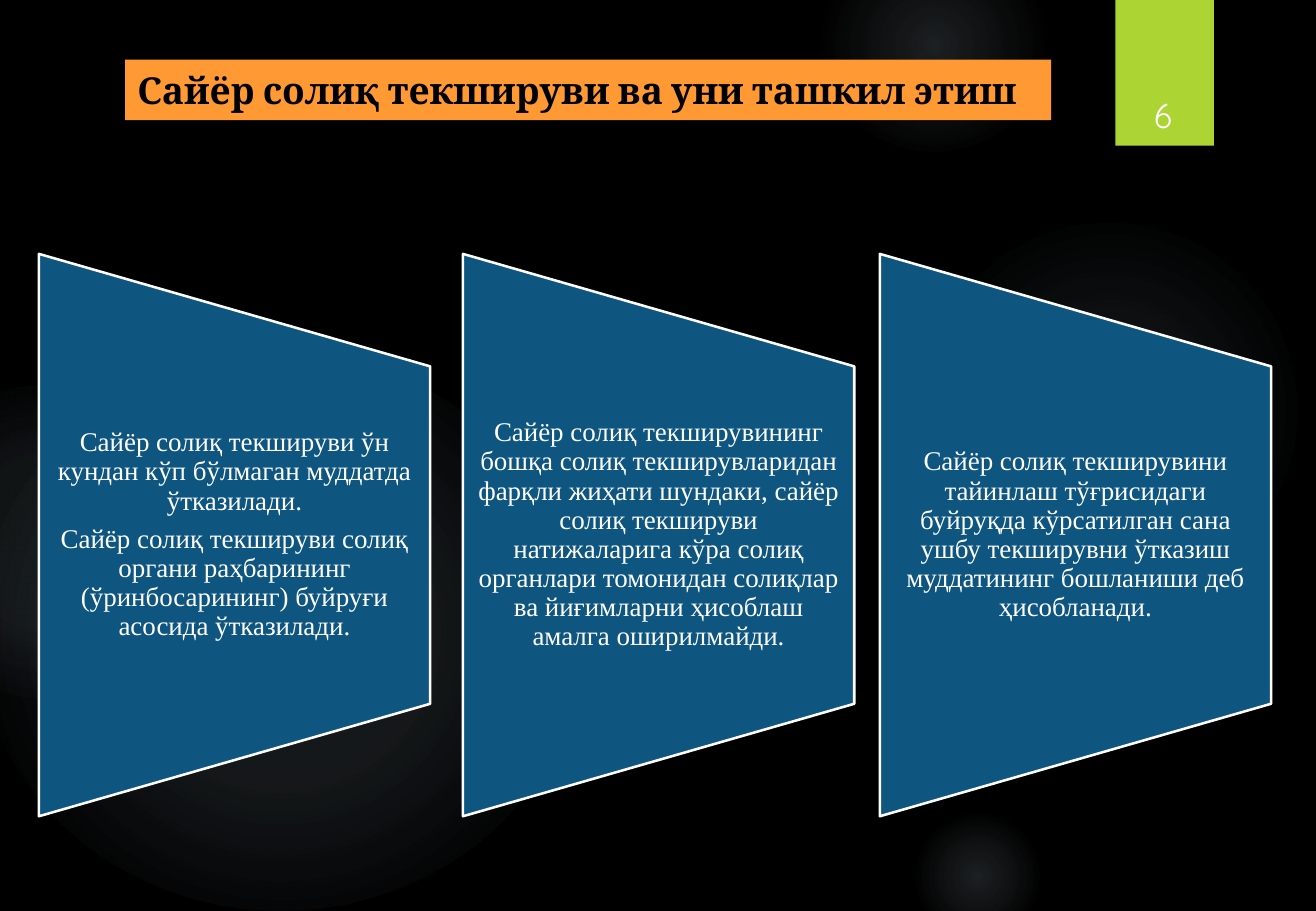
from dataclasses import dataclass

from lxml import etree
from pptx import Presentation
from pptx.dml.color import RGBColor
from pptx.enum.shapes import MSO_SHAPE
from pptx.enum.text import MSO_ANCHOR, MSO_AUTO_SIZE, PP_ALIGN
from pptx.oxml.ns import qn
from pptx.util import Inches, Pt

ELLIPSE = MSO_SHAPE.OVAL
RECTANGLE = MSO_SHAPE.RECTANGLE
TRAPEZOID = MSO_SHAPE.FLOWCHART_MANUAL_OPERATION
CENTER, LEFT = PP_ALIGN.CENTER, PP_ALIGN.LEFT
MIDDLE, BOTTOM = MSO_ANCHOR.MIDDLE, MSO_ANCHOR.BOTTOM
TITLE_ONLY = 5


@dataclass(frozen=True)
class Theme:
    background: str = "000000"
    glow: str = "CAE7F9"
    tab: str = "ACD433"
    panel: str = "0E5580"
    light: str = "FFFFFF"
    banner: str = "FF9933"
    dark: str = "000000"
    title_font: str = "Cambria"
    body_font: str = "Times New Roman"
    number_font: str = "Quicksand"
    title_size: int = 22
    body_size: int = 16
    number_size: int = 20


THEME = Theme()

TITLE = "Сайёр солиқ текшируви ва уни ташкил этиш"
PAGE_NUMBER = "6"

# Left, top, width, height; then (position, opacity) stops in percent
GLOWS = [
    ((7.46, 1.83, 3.34, 3.08), ((0, 7), (36, 6), (69, 0))),
    ((6.74, -0.5, 1.9, 1.75), ((0, 14), (36, 7), (73, 0))),
    ((7.46, 6.67, 1.17, 1.08), ((0, 14), (36, 7), (66, 0))),
    ((-0.18, 2.92, 4.97, 4.58), ((0, 11), (36, 10), (75, 0))),
    ((-0.99, 3.17, 2.8, 2.58), ((0, 8), (36, 8), (72, 0))),
]

PANEL_TOP, PANEL_WIDTH, PANEL_HEIGHT = 2.09, 3.22, 4.63
PANELS = [
    (0.32, [
        "Сайёр солиқ текшируви ўн кундан кўп бўлмаган муддатда ўтказилади.",
        "Сайёр солиқ текшируви солиқ органи раҳбарининг (ўринбосарининг) "
        "буйруғи асосида ўтказилади.",
    ]),
    (3.81, [
        "Сайёр солиқ текширувининг бошқа солиқ текширувларидан фарқли жиҳати "
        "шундаки, сайёр солиқ текшируви натижаларига кўра солиқ органлари "
        "томонидан солиқлар ва йиғимларни ҳисоблаш амалга оширилмайди.",
    ]),
    (7.24, [
        "Сайёр солиқ текширувини тайинлаш тўғрисидаги буйруқда кўрсатилган "
        "сана ушбу текширувни ўтказиш муддатининг бошланиши деб ҳисобланади.",
    ]),
]


def color(value):
    return RGBColor.from_string(value)


def add_filled(page, kind, box, fill):
    shape = page.shapes.add_shape(kind, *map(Inches, box))
    shape.shadow.inherit = False
    shape.fill.solid()
    shape.fill.fore_color.rgb = color(fill)
    shape.line.fill.background()
    return shape


def write(shape, paragraphs, font, size, ink, align, anchor, bold=False):
    frame = shape.text_frame
    frame.word_wrap = True
    frame.auto_size = MSO_AUTO_SIZE.NONE
    frame.vertical_anchor = anchor
    frame.text = "\n".join(paragraphs)
    for para in frame.paragraphs:
        para.alignment = align
        for span in para.runs:
            span.font.name = font
            span.font.size = Pt(size)
            span.font.bold = bold
            span.font.color.rgb = color(ink)
    return frame


def add_glow(page, box, stops):
    glow = add_filled(page, ELLIPSE, box, THEME.glow)
    # Replace the solid fill by a transparent radial gradient
    solid = glow.fill._xPr.find(qn("a:solidFill"))
    gradient = etree.Element(qn("a:gradFill"), rotWithShape="1")
    stop_list = etree.SubElement(gradient, qn("a:gsLst"))
    for position, opacity in stops:
        stop = etree.SubElement(stop_list, qn("a:gs"), pos=str(position * 1000))
        tint = etree.SubElement(stop, qn("a:srgbClr"), val=THEME.glow)
        etree.SubElement(tint, qn("a:alpha"), val=str(opacity * 1000))
    radial = etree.SubElement(gradient, qn("a:path"))
    radial.set("path", "circle")
    etree.SubElement(radial, qn("a:fillToRect"),
                     l="50000", t="50000", r="50000", b="50000")
    solid.getparent().replace(solid, gradient)


def add_page_number(page, box):
    left, top, width, height = box
    add_filled(page, RECTANGLE, box, THEME.tab)
    number = page.shapes.add_textbox(
        Inches(left + 0.02), Inches(top + 0.32),
        Inches(width - 0.07), Inches(height - 0.36))
    write(number, [PAGE_NUMBER], THEME.number_font, THEME.number_size,
          THEME.light, CENTER, BOTTOM)


def add_panel(page, box, paragraphs):
    left, top, width, height = box
    # The trapezoid lies on its side, so its own box is turned about the centre
    shift = (height - width) / 2
    panel = add_filled(page, TRAPEZOID,
                       (left - shift, top + shift, height, width), THEME.panel)
    panel.rotation = 270
    panel.line.color.rgb = color(THEME.light)
    panel.line.width = Pt(1.5)

    # The text fills the middle three fifths
    label = page.shapes.add_textbox(
        Inches(left), Inches(top + height * 0.2),
        Inches(width), Inches(height * 0.6))
    frame = write(label, paragraphs, THEME.body_font, THEME.body_size,
                  THEME.light, CENTER, MIDDLE)
    frame.margin_left = frame.margin_right = Inches(0.12)
    frame.margin_top = frame.margin_bottom = 0
    for para in frame.paragraphs:
        para.line_spacing = 0.9
        para.space_after = Pt(5.5)


def place_title(page, box):
    title = page.shapes.title
    title.left, title.top, title.width, title.height = map(Inches, box)
    title.fill.solid()
    title.fill.fore_color.rgb = color(THEME.banner)
    write(title, [TITLE], THEME.title_font, THEME.title_size,
          THEME.dark, LEFT, MIDDLE, bold=True)
    # Bring the banner in front of the glows
    page.shapes._spTree.append(title._element)


def build_page(deck):
    page = deck.slides.add_slide(deck.slide_layouts[TITLE_ONLY])
    page.background.fill.solid()
    page.background.fill.fore_color.rgb = color(THEME.background)
    for box, stops in GLOWS:
        add_glow(page, box, stops)
    for left, paragraphs in PANELS:
        add_panel(page, (left, PANEL_TOP, PANEL_WIDTH, PANEL_HEIGHT), paragraphs)
    add_page_number(page, (9.18, 0, 0.81, 1.2))
    place_title(page, (1.03, 0.49, 7.62, 0.5))


def main():
    deck = Presentation()
    deck.slide_width, deck.slide_height = Inches(10.83), Inches(7.5)
    build_page(deck)
    deck.save("out.pptx")


if __name__ == "__main__":
    main()
